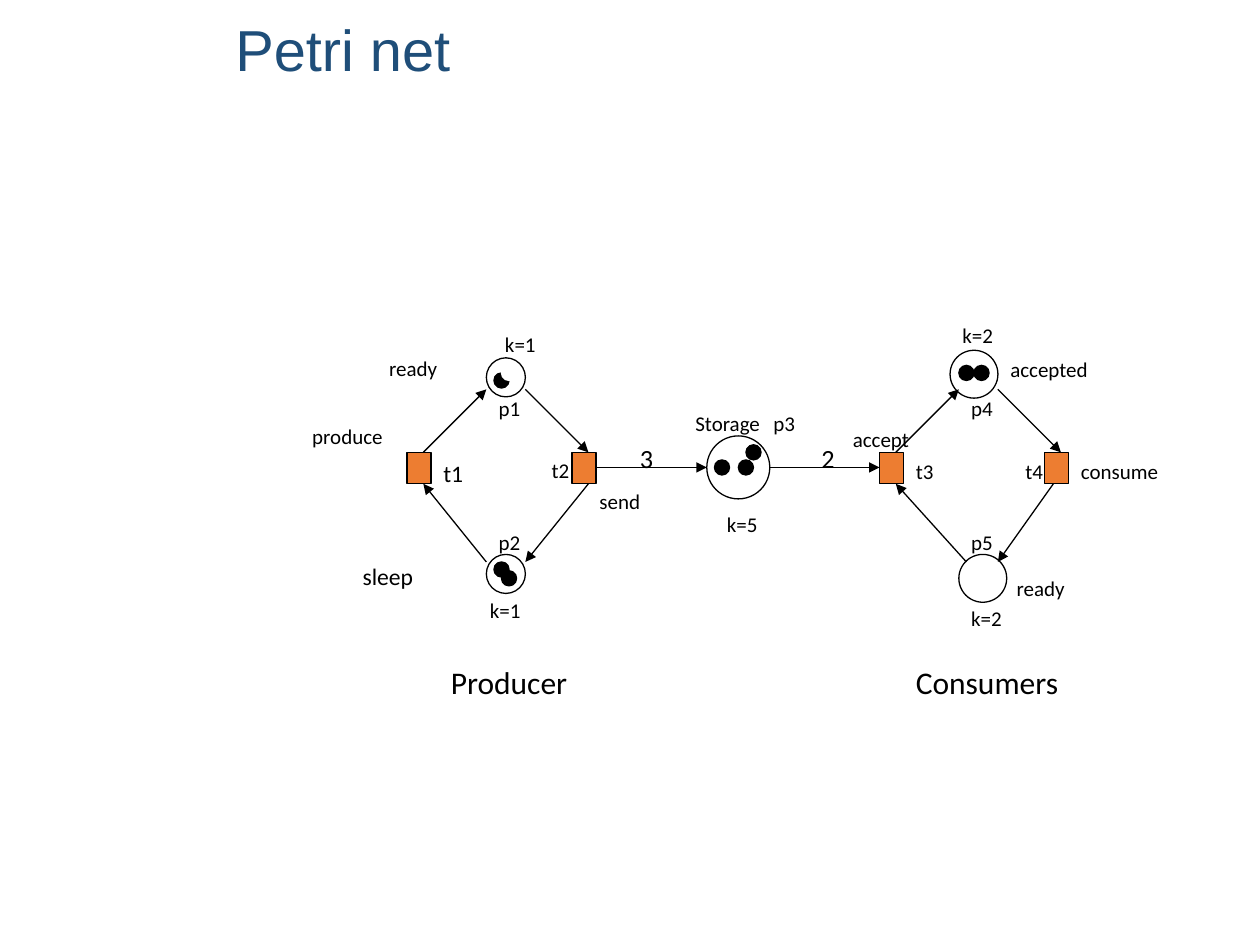
from pptx import Presentation
from pptx.dml.color import RGBColor
from pptx.enum.shapes import MSO_CONNECTOR, MSO_SHAPE
from pptx.enum.text import MSO_ANCHOR, MSO_AUTO_SIZE
from pptx.oxml.ns import qn
from pptx.util import Inches, Pt
from lxml.etree import SubElement

BLACK = RGBColor(0, 0, 0)
WHITE = RGBColor(255, 255, 255)
ORANGE = RGBColor(0xED, 0x7D, 0x31)
NAVY = RGBColor(0x1F, 0x4E, 0x79)

PLACE_CIRCLES = [  # left, top, diameter
    (3.86, 2.84, 0.31), (3.86, 4.4, 0.31), (5.61, 3.46, 0.5),
    (7.54, 2.78, 0.38), (7.61, 4.4, 0.38),
]
TRANSITION_LEFTS = [3.23, 4.54, 6.98, 8.29]
TRANSITION_TOP = 3.59
TOKENS = [
    (3.92, 2.96), (3.92, 4.46), (3.98, 4.53),
    (5.67, 3.65), (5.86, 3.65), (5.92, 3.53),
    (7.61, 2.9), (7.73, 2.9),
]
TOKEN_BITE = (3.98, 2.9)
ARCS = [  # start x, y, end x, y
    (3.36, 3.59, 3.86, 3.09), (4.17, 3.09, 4.67, 3.59),
    (4.67, 3.84, 4.17, 4.46), (3.86, 4.46, 3.36, 3.84),
    (7.11, 3.59, 7.61, 3.09), (7.92, 3.09, 8.42, 3.59),
    (8.36, 3.84, 7.92, 4.46), (7.67, 4.46, 7.11, 3.84),
    (4.73, 3.71, 5.61, 3.71), (6.11, 3.71, 6.98, 3.71),
]
LABELS = {  # size: (text, left, top, width)
    12: [
        ("ready", 2.99, 2.77, 0.62), ("produce", 2.38, 3.31, 0.83),
        ("send", 4.66, 3.83, 0.56), ("accept", 6.67, 3.34, 0.71),
        ("accepted", 7.92, 2.78, 0.89), ("consume", 8.48, 3.59, 0.89),
        ("ready", 7.97, 4.52, 0.62), ("Storage", 5.42, 3.21, 0.72),
        ("p1", 3.86, 3.09, 0.4), ("p2", 3.86, 4.15, 0.4),
        ("p3", 6.04, 3.21, 0.4), ("p4", 7.61, 3.09, 0.4),
        ("p5", 7.61, 4.15, 0.4), ("t2", 4.28, 3.58, 0.36),
        ("t3", 7.17, 3.59, 0.36), ("t4", 8.04, 3.59, 0.36),
        ("k=1", 3.91, 2.58, 0.46), ("k=1", 3.79, 4.69, 0.46),
        ("k=5", 5.67, 4.01, 0.46), ("k=2", 7.54, 2.51, 0.46),
        ("k=2", 7.61, 4.76, 0.46),
    ],
    13.5: [("t1", 3.42, 3.59, 0.38), ("sleep", 2.78, 4.41, 0.65)],
    15: [("3", 4.98, 3.46, 0.32), ("2", 6.42, 3.46, 0.32)],
    18: [("Producer", 3.48, 5.21, 1.22), ("Consumers", 7.17, 5.21, 1.47)],
}


def write_text(frame, text, *, size, font="Calibri", color=BLACK, spacing=None):
    paragraph = frame.paragraphs[0]
    if spacing:
        paragraph.line_spacing = spacing
    run = paragraph.add_run()
    run.text = text
    run.font.size = Pt(size)
    run.font.name = font
    run.font.color.rgb = color


class NetPainter:
    """Draws Petri net elements on one slide in a shared style."""

    line_width = Pt(0.75)
    token_size = 0.12
    transition_size = (0.19, 0.25)

    def __init__(self, slide):
        self.shapes = slide.shapes

    def outlined(self, preset, left, top, width, height, fill=None, line=BLACK):
        shape = self.shapes.add_shape(
            preset, Inches(left), Inches(top), Inches(width), Inches(height))
        shape.shadow.inherit = False
        if fill is None:
            shape.fill.background()
        else:
            shape.fill.solid()
            shape.fill.fore_color.rgb = fill
        shape.line.color.rgb = line
        shape.line.width = self.line_width

    def place(self, left, top, diameter):
        self.outlined(MSO_SHAPE.OVAL, left, top, diameter, diameter)

    def token(self, left, top, color=BLACK):
        self.outlined(MSO_SHAPE.OVAL, left, top, self.token_size,
                      self.token_size, color, color)

    def transition(self, left, top):
        self.outlined(MSO_SHAPE.RECTANGLE, left, top, *self.transition_size, ORANGE)

    def arc(self, *ends):
        connector = self.shapes.add_connector(
            MSO_CONNECTOR.STRAIGHT, *map(Inches, ends))
        connector.line.color.rgb = BLACK
        connector.line.width = self.line_width
        SubElement(connector.line._get_or_add_ln(), qn("a:tailEnd"), type="triangle")
        SubElement(connector._element.spPr, qn("a:effectLst"))

    def label(self, text, left, top, width, size):
        height = size * 1.2 / 72 + 0.1
        frame = self.shapes.add_textbox(
            Inches(left), Inches(top), Inches(width), Inches(height)).text_frame
        frame.word_wrap = False
        frame.auto_size = MSO_AUTO_SIZE.SHAPE_TO_FIT_TEXT
        write_text(frame, text, size=size)

    def title(self, text):
        frame = self.shapes.add_textbox(
            Inches(1.77), 0, Inches(8.23), Inches(1.29)).text_frame
        frame.word_wrap = True
        frame.vertical_anchor = MSO_ANCHOR.TOP
        frame.margin_top = Inches(0.17)
        write_text(frame, text, size=33, font="Arial", color=NAVY, spacing=0.9)


def main():
    deck = Presentation()
    deck.slide_width, deck.slide_height = Inches(10), Inches(7.5)
    net = NetPainter(deck.slides.add_slide(deck.slide_layouts[6]))

    net.title("Petri net")
    for circle in PLACE_CIRCLES:
        net.place(*circle)
    for ends in ARCS:
        net.arc(*ends)
    for size, labels in LABELS.items():
        for label in labels:
            net.label(*label, size)
    for left in TRANSITION_LEFTS:
        net.transition(left, TRANSITION_TOP)
    for position in TOKENS:
        net.token(*position)
    net.token(*TOKEN_BITE, WHITE)

    deck.save("out.pptx")


if __name__ == "__main__":
    main()
